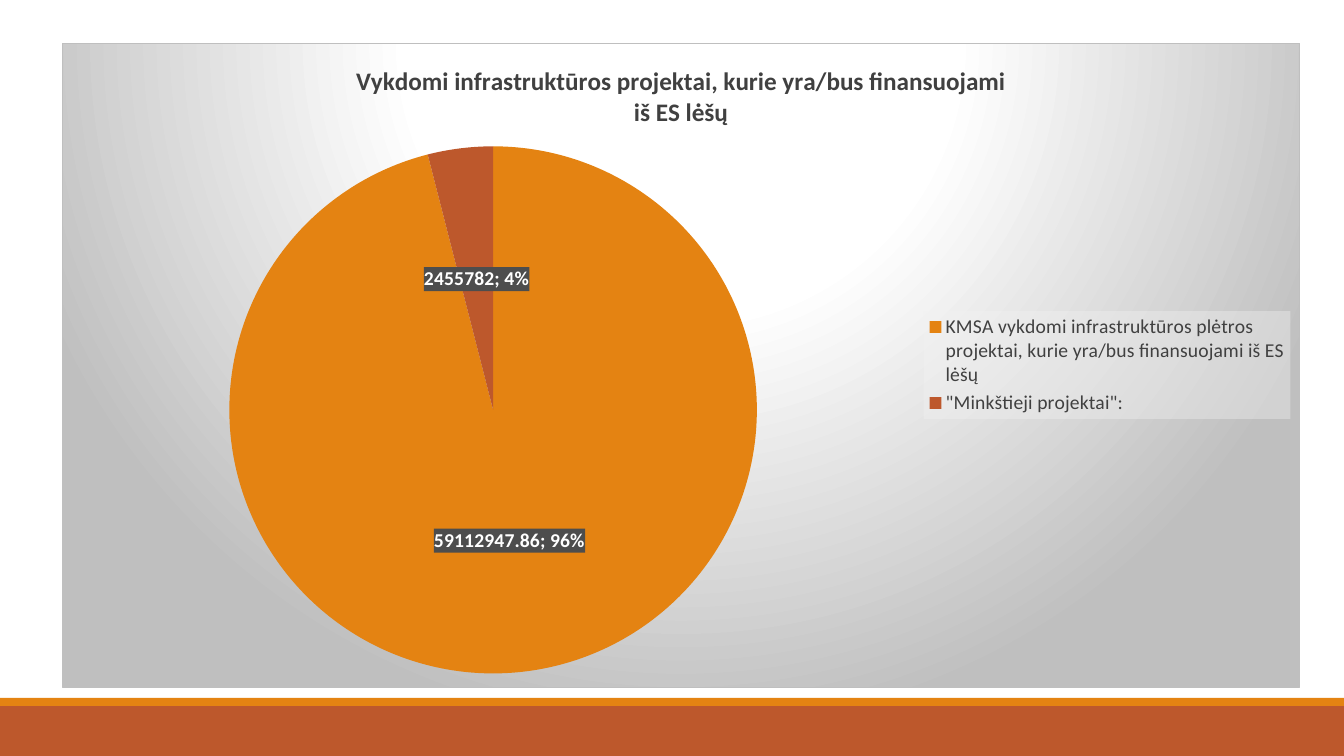
from pptx import Presentation
from pptx.chart.data import CategoryChartData
from pptx.dml.color import RGBColor
from pptx.enum.chart import XL_CHART_TYPE, XL_LABEL_POSITION, XL_LEGEND_POSITION
from pptx.enum.shapes import MSO_SHAPE
from pptx.oxml import parse_xml
from pptx.oxml.ns import nsdecls, qn
from pptx.util import Emu, Pt

ORANGE, RUST, GREY, DARK, WHITE = "E48312", "BD582C", "BFBFBF", "404040", "FFFFFF"


def px(n):
    return Emu(round(n * 914400 / 100.8))


def rgb(value):
    return RGBColor.from_string(value)


prs = Presentation()
prs.slide_width, prs.slide_height = px(1344), px(756)
s = prs.slides.add_slide(prs.slide_layouts[6])

for top, height, color in ((706, 50, RUST), (698, 8, ORANGE)):
    sp = s.shapes.add_shape(MSO_SHAPE.RECTANGLE, 0, px(top), px(1344), px(height))
    sp.shadow.inherit = False
    sp.fill.solid()
    sp.fill.fore_color.rgb = rgb(color)
    sp.line.fill.background()

data = CategoryChartData()
data.categories = [
    "KMSA vykdomi infrastruktūros plėtros projektai, kurie yra/bus finansuojami iš ES lėšų",
    '"Minkštieji projektai":',
]
data.add_series("Series 1", (59112947.86, 2455782))
chart = s.shapes.add_chart(
    XL_CHART_TYPE.PIE, px(62), px(43), px(1238), px(645), data
).chart
plot = chart.plots[0]
plot.vary_by_categories = True
for i, color in enumerate((ORANGE, RUST)):
    fill = plot.series[0].points[i].format.fill
    fill.solid()
    fill.fore_color.rgb = rgb(color)

chart.has_title = True
tf = chart.chart_title.text_frame
tf.text = "Vykdomi infrastruktūros projektai, kurie yra/bus finansuojami\niš ES lėšų"

chart.has_legend = True
legend = chart.legend
legend.position = XL_LEGEND_POSITION.RIGHT
legend.include_in_layout = False

plot.has_data_labels = True
labels = plot.data_labels
label_format = {
    "show_value": True,
    "show_percentage": True,
    "position": XL_LABEL_POSITION.CENTER,
}
for name, value in label_format.items():
    setattr(labels, name, value)

fonts = [
    (chart.font, 10, False, "000000"),
    (legend.font, 14, False, DARK),
    (labels.font, 14, True, WHITE),
]
fonts += [(r.font, 18, True, DARK) for p in tf.paragraphs for r in p.runs]
for font, size, bold, color in fonts:
    for name, value in {"name": "Calibri", "size": Pt(size), "bold": bold}.items():
        setattr(font, name, value)
    font.color.rgb = rgb(color)

backdrop = f"""<a:gradFill><a:gsLst>
<a:gs pos="0"><a:srgbClr val="{WHITE}"/></a:gs>
<a:gs pos="39000"><a:srgbClr val="{WHITE}"/></a:gs>
<a:gs pos="100000"><a:srgbClr val="{GREY}"/></a:gs></a:gsLst>
<a:path path="circle"><a:fillToRect l="50000" t="-80000" r="50000" b="180000"/></a:path>
</a:gradFill><a:ln w="9525"><a:solidFill><a:srgbClr val="{GREY}"/></a:solidFill></a:ln>"""
legend_fill = '<a:solidFill><a:srgbClr val="F2F2F2"><a:alpha val="39000"/></a:srgbClr></a:solidFill>'
label_fill = '<a:solidFill><a:srgbClr val="4D4D4D"/></a:solidFill>'
space = chart.element
for parent, body in ((space, backdrop), (legend._element, legend_fill), (labels._element, label_fill)):
    parent.find(qn("c:txPr")).addprevious(
        parse_xml(f'<c:spPr {nsdecls("c", "a")}>{body}</c:spPr>')
    )

labels._element.find(qn("c:showBubbleSize")).addnext(
    parse_xml(f'<c:separator {nsdecls("c")}>; </c:separator>')
)

area = space.find(qn("c:chart")).find(qn("c:plotArea"))
for old in area.findall(qn("c:layout")) + legend._element.findall(qn("c:layout")):
    old.getparent().remove(old)
layouts = (
    (area, 0, '<c:layoutTarget val="inner"/>', (167, 103, 528, 528)),
    (legend._element, 1, "", (862, 268, 367, 108)),
)
for parent, index, target, (x, y, w, h) in layouts:
    parent.insert(index, parse_xml(
        f'<c:layout {nsdecls("c")}><c:manualLayout>{target}'
        '<c:xMode val="edge"/><c:yMode val="edge"/>'
        f'<c:x val="{x / 1238}"/><c:y val="{y / 645}"/>'
        f'<c:w val="{w / 1238}"/><c:h val="{h / 645}"/>'
        '</c:manualLayout></c:layout>'
    ))

prs.save("out.pptx")
